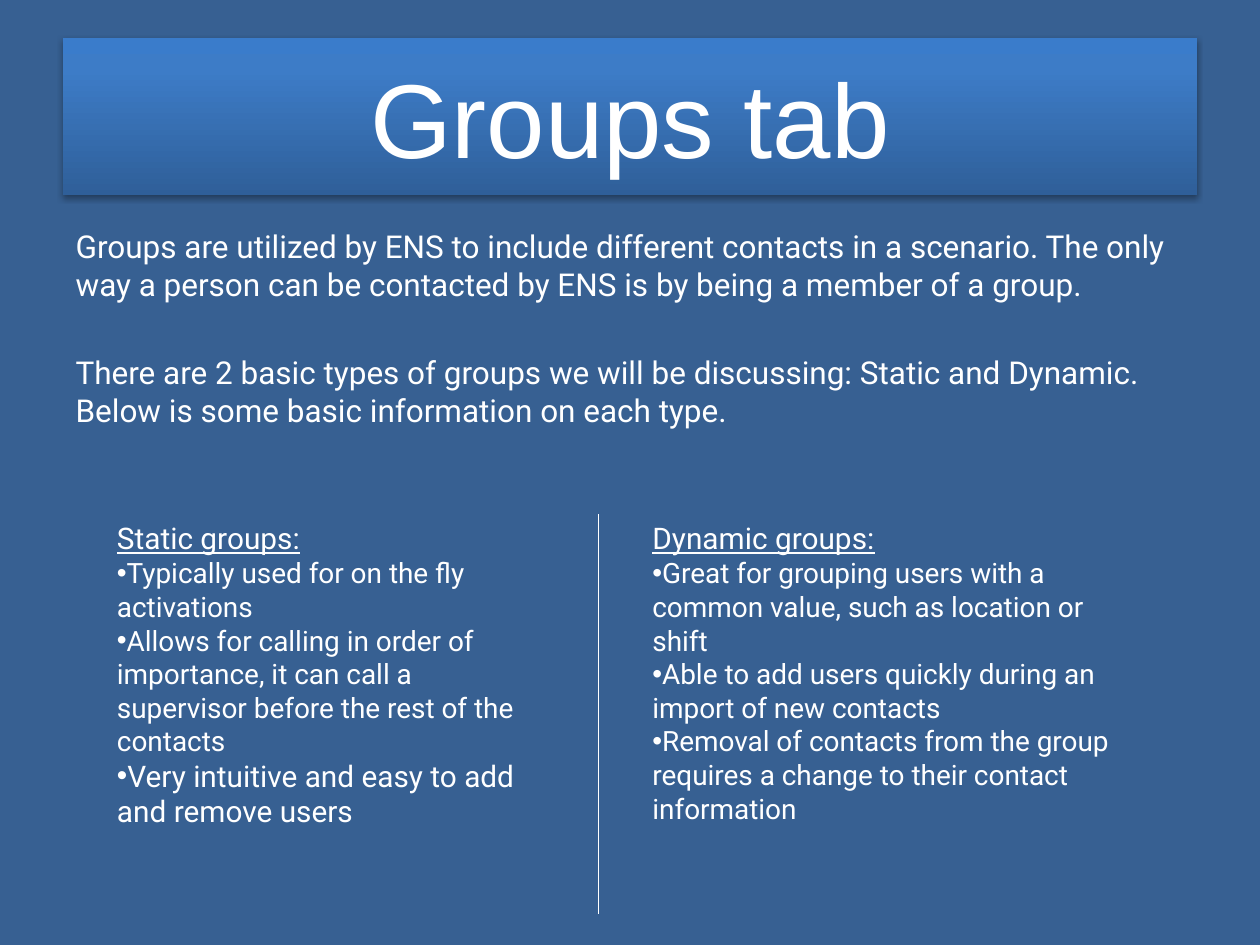
from lxml.etree import SubElement
from pptx import Presentation
from pptx.dml.color import RGBColor
from pptx.enum.shapes import MSO_CONNECTOR
from pptx.enum.text import MSO_ANCHOR, MSO_AUTO_SIZE, PP_ALIGN
from pptx.oxml import parse_xml
from pptx.oxml.ns import nsdecls, qn
from pptx.util import Inches, Pt

BACKGROUND = RGBColor(0x37, 0x60, 0x92)
WHITE = RGBColor(0xFF, 0xFF, 0xFF)
BANNER_STOPS = [
    (0, RGBColor(0x2F, 0x5F, 0x99)),
    (80, RGBColor(0x3D, 0x7C, 0xC7)),
    (100, RGBColor(0x3A, 0x7C, 0xCB)),
]


def place(shape, left, top, width, height):
    box = {"left": left, "top": top, "width": width, "height": height}
    for name, value in box.items():
        setattr(shape, name, Inches(value))


def write(paragraph, text, size, font_name="Roboto", bullet=None, underline=False):
    run = paragraph.add_run()
    run.text = text
    run.font.color.rgb = WHITE
    font_format = {"name": font_name, "size": Pt(size), "underline": underline}
    for name, value in font_format.items():
        setattr(run.font, name, value)
    properties = paragraph._p.get_or_add_pPr()
    properties.set("marL", "0")
    properties.set("indent", "0")
    if bullet:
        SubElement(properties, qn("a:buFont"), typeface="Arial")
        SubElement(properties, qn("a:buChar"), char=bullet)
    else:
        SubElement(properties, qn("a:buNone"))


presentation = Presentation()
presentation.slide_width = Inches(10)
presentation.slide_height = Inches(7.5)
slide = presentation.slides.add_slide(presentation.slide_layouts[1])
slide.background.fill.solid()
slide.background.fill.fore_color.rgb = BACKGROUND

# Title banner with gradient and shadow
title = slide.shapes.title
place(title, 0.5, 0.3, 9, 1.25)
stops = "".join(
    f'<a:gs pos="{position * 1000}"><a:srgbClr val="{color}"/></a:gs>'
    for position, color in BANNER_STOPS
)
banner_parts = [
    f'<a:prstGeom {nsdecls("a")} prst="rect"><a:avLst/></a:prstGeom>',
    f'<a:gradFill {nsdecls("a")} rotWithShape="1"><a:gsLst>{stops}</a:gsLst>'
    '<a:lin ang="16200000" scaled="0"/></a:gradFill>',
    f'<a:ln {nsdecls("a")}><a:noFill/></a:ln>',
    f'<a:effectLst {nsdecls("a")}><a:outerShdw blurRad="{Pt(3.1)}" dist="{Pt(1.8)}" '
    'dir="5400000" rotWithShape="0"><a:srgbClr val="000000"><a:alpha val="35000"/>'
    '</a:srgbClr></a:outerShdw></a:effectLst>',
]
for part in banner_parts:
    title._element.spPr.append(parse_xml(part))
title.text_frame.auto_size = MSO_AUTO_SIZE.NONE
title.text_frame.vertical_anchor = MSO_ANCHOR.MIDDLE
title.text_frame.paragraphs[0].alignment = PP_ALIGN.CENTER
write(title.text_frame.paragraphs[0], "Groups tab", 60, "Arial")

# Introduction
body = slide.placeholders[1]
place(body, 0.5, 1.75, 9, 2.08)
body.text_frame.auto_size = MSO_AUTO_SIZE.NONE
introduction = [
    ("Groups are utilized by ENS to include different contacts in a scenario. "
     "The only way a person can be contacted by ENS is by being a member of a group.", 0),
    ("There are 2 basic types of groups we will be discussing: Static and Dynamic. "
     "Below is some basic information on each type.", 28.8),
]
for index, (text, space_before) in enumerate(introduction):
    frame = body.text_frame
    paragraph = frame.add_paragraph() if index else frame.paragraphs[0]
    paragraph.space_before = Pt(space_before)
    write(paragraph, text, 18)

# Two columns: left, width, height, heading, bullets with sizes
columns = [
    (0.83, 3.58, 2.57, "Static groups:", [
        ("Typically used for on the fly activations", 16),
        ("Allows for calling in order of importance, it can call a supervisor "
         "before the rest of the contacts", 16),
        ("Very intuitive and easy to add and remove users", 17),
    ]),
    (5.08, 3.86, 2.54, "Dynamic groups:", [
        ("Great for grouping users with a common value, such as location or shift", 16),
        ("Able to add users quickly during an import of new contacts", 16),
        ("Removal of contacts from the group requires a change to their contact "
         "information", 16),
    ]),
]
for left, width, height, heading, bullets in columns:
    column = slide.shapes.add_textbox(
        Inches(left), Inches(4.08), Inches(width), Inches(height))
    frame = column.text_frame
    frame.word_wrap = True
    frame.auto_size = MSO_AUTO_SIZE.SHAPE_TO_FIT_TEXT
    write(frame.paragraphs[0], heading, 17, underline=True)
    for text, size in bullets:
        write(frame.add_paragraph(), text, size, bullet="•")

# Divider between the columns
divider = slide.shapes.add_connector(
    MSO_CONNECTOR.STRAIGHT, Inches(4.75), Inches(4.08), Inches(4.75), Inches(7.25))
divider.line.color.rgb = WHITE
divider.line.width = Pt(0.75)
SubElement(divider._element.spPr, qn("a:effectLst"))

presentation.save("out.pptx")
